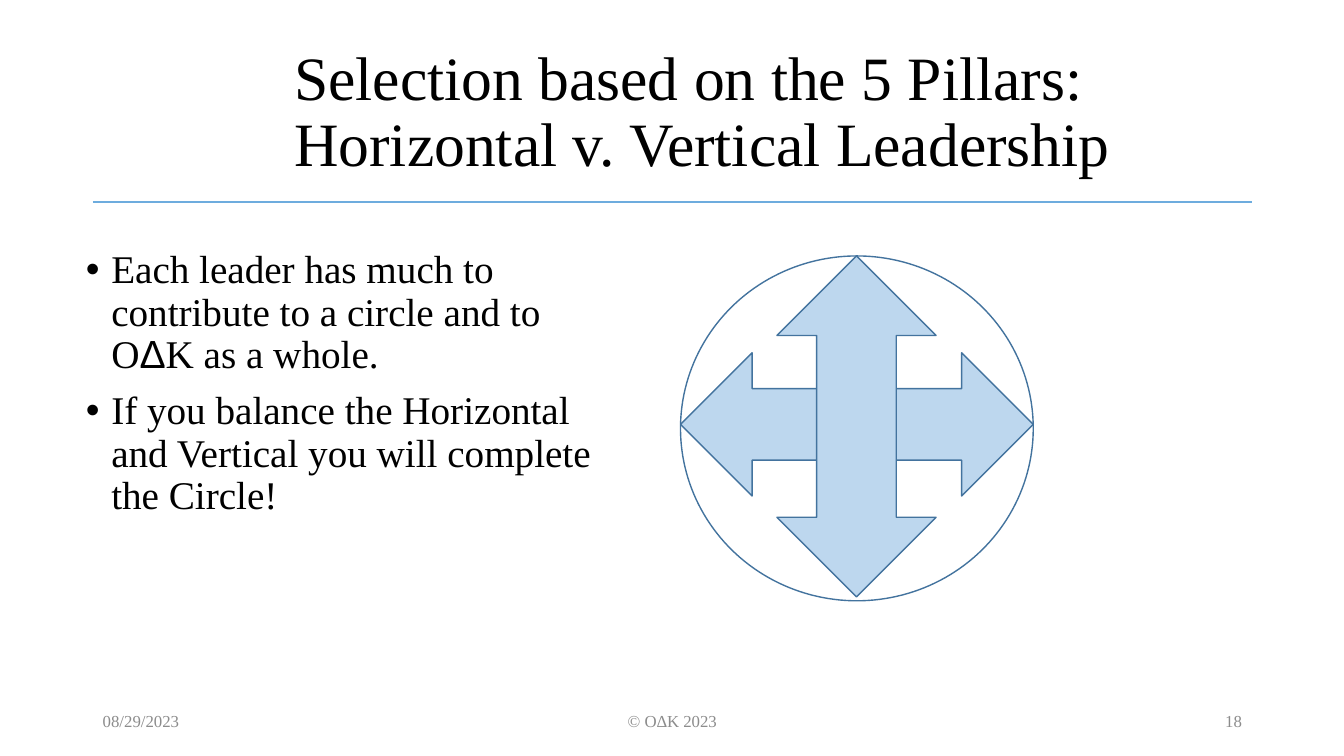
from lxml import etree
from pptx import Presentation
from pptx.dml.color import RGBColor
from pptx.enum.shapes import MSO_CONNECTOR, MSO_SHAPE
from pptx.enum.text import MSO_ANCHOR, MSO_AUTO_SIZE, PP_ALIGN
from pptx.oxml.ns import qn
from pptx.util import Cm, Pt

LEFT, CENTER, RIGHT = PP_ALIGN.LEFT, PP_ALIGN.CENTER, PP_ALIGN.RIGHT
TOP, MIDDLE = MSO_ANCHOR.TOP, MSO_ANCHOR.MIDDLE
NO_AUTOFIT = MSO_AUTO_SIZE.NONE
STRAIGHT = MSO_CONNECTOR.STRAIGHT
HORIZONTAL_ARROW = MSO_SHAPE.LEFT_RIGHT_ARROW
VERTICAL_ARROW = MSO_SHAPE.UP_DOWN_ARROW
CIRCLE = MSO_SHAPE.OVAL

BLACK = RGBColor(0x00, 0x00, 0x00)
GRAY = RGBColor(0x8C, 0x8C, 0x8C)
RULE_BLUE = RGBColor(0x6D, 0xAC, 0xDE)
ARROW_BLUE = RGBColor(0xBD, 0xD7, 0xEE)
OUTLINE_BLUE = RGBColor(0x43, 0x73, 0x9E)
SERIF, SANS = "Times New Roman", "Arial"


def place(shape, left, top, width, height, anchor):
    """Set the position and text frame of a text shape."""
    box = {"left": left, "top": top, "width": width, "height": height}
    for name, value in box.items():
        setattr(shape, name, Cm(value))
    frame = {"word_wrap": True, "auto_size": NO_AUTOFIT, "vertical_anchor": anchor}
    for name, value in frame.items():
        setattr(shape.text_frame, name, value)


def add_text(paragraph, text, size, color, font_name=SERIF):
    """Add one formatted run to a paragraph."""
    run = paragraph.add_run()
    run.text = text
    for name, value in {"size": Pt(size), "name": font_name}.items():
        setattr(run.font, name, value)
    run.font.color.rgb = color


presentation = Presentation()
presentation.slide_width, presentation.slide_height = Cm(33.87), Cm(19.05)
slide = presentation.slides.add_slide(presentation.slide_layouts[1])

# Title
title = slide.shapes.title
place(title, 7.16, 1.02, 24.36, 3.68, MIDDLE)
paragraph = title.text_frame.paragraphs[0]
paragraph.alignment, paragraph.line_spacing = LEFT, 0.9
add_text(paragraph, "Selection based on the 5 Pillars:", 44, BLACK)
paragraph.add_line_break()
add_text(paragraph, "Horizontal v. Vertical Leadership", 44, BLACK)

# Rule under the title
rule = slide.shapes.add_connector(STRAIGHT, Cm(2.34), Cm(5.08), Cm(31.55), Cm(5.08))
rule.line.color.rgb = RULE_BLUE
rule.line.width = Pt(1.5)
etree.SubElement(rule._element.spPr, qn("a:effectLst"))

# Bulleted list
bullets = [
    [("Each leader has much to contribute to a circle and to O", SERIF),
     ("Δ", SANS), ("K as a whole.", SERIF)],
    [("If you balance the Horizontal and Vertical you will complete the Circle!", SERIF)],
]
body = slide.placeholders[1]
place(body, 1.91, 6.17, 14.05, 7.29, TOP)
for index, parts in enumerate(bullets):
    frame = body.text_frame
    paragraph = frame.add_paragraph() if index else frame.paragraphs[0]
    properties = paragraph._p.get_or_add_pPr()
    properties.set("marL", str(Cm(0.64)))
    properties.set("indent", str(Cm(-0.64)))
    etree.SubElement(properties, qn("a:buFont"), typeface=SANS)
    etree.SubElement(properties, qn("a:buChar"), char="•")
    spacing = {"alignment": LEFT, "line_spacing": 0.9,
               "space_before": Pt(10 if index else 0)}
    for name, value in spacing.items():
        setattr(paragraph, name, value)
    for text, font_name in parts:
        add_text(paragraph, text, 28, BLACK, font_name)

# Crossed arrows inside a circle
diagram = slide.shapes.add_group_shape()
diagram_parts = [
    (HORIZONTAL_ARROW, 17.15, 8.89, 8.89, 3.61),
    (VERTICAL_ARROW, 19.58, 6.45, 4.01, 8.59),
    (CIRCLE, 17.15, 6.45, 8.89, 8.69),
]
for kind, *box in diagram_parts:
    shape = diagram.shapes.add_shape(kind, *map(Cm, box))
    shape.shadow.inherit = False
    shape.line.color.rgb = OUTLINE_BLUE
    shape.line.width = Pt(1)
    if kind == CIRCLE:
        shape.fill.background()
    else:
        shape.fill.solid()
        shape.fill.fore_color.rgb = ARROW_BLUE

# Footer: date, copyright and slide number
footers = [
    ("08/29/2023", 2.34, 7.62, LEFT),
    ("© O∆K 2023", 11.23, 11.43, CENTER),
    ("18", 23.93, 7.62, RIGHT),
]
for text, left, width, alignment in footers:
    footer = slide.shapes.add_textbox(0, 0, 0, 0)
    place(footer, left, 17.65, width, 1.02, MIDDLE)
    paragraph = footer.text_frame.paragraphs[0]
    paragraph.alignment = alignment
    add_text(paragraph, text, 12, GRAY)

presentation.save("out.pptx")
